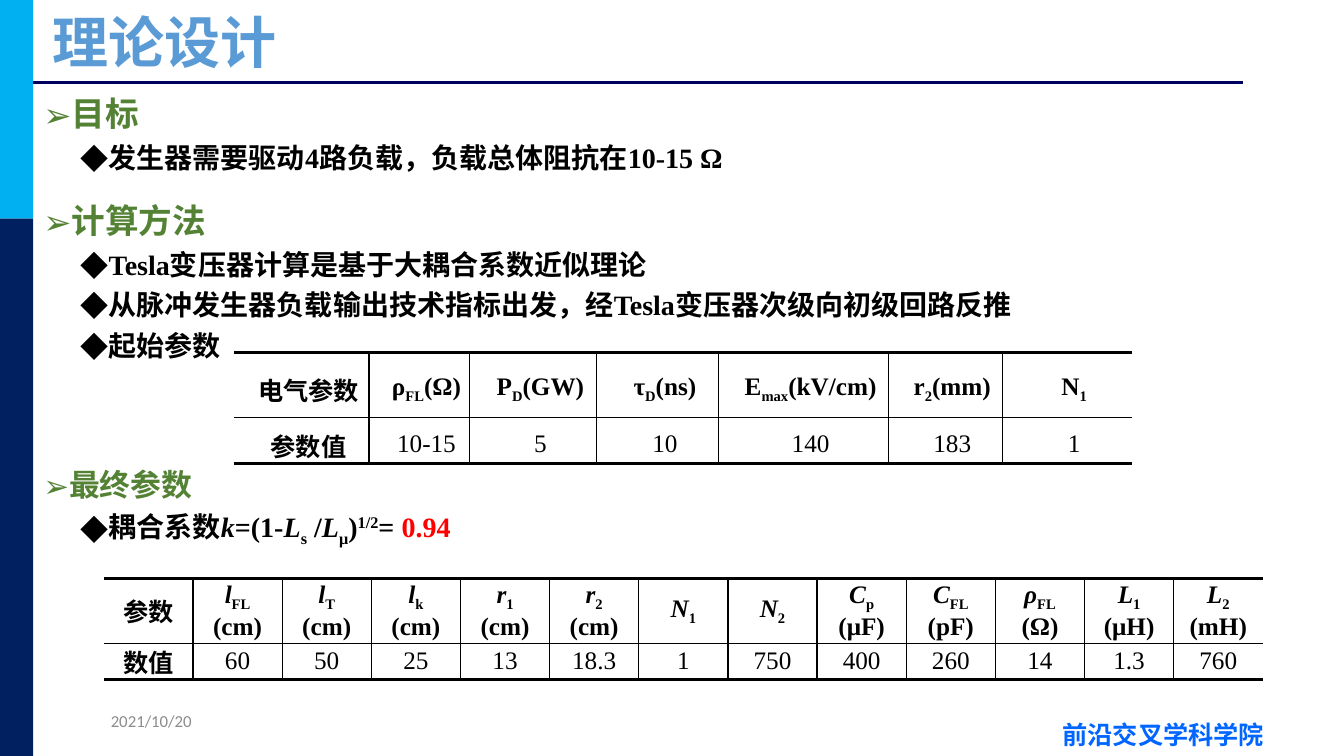
from dataclasses import dataclass
from typing import Optional

from lxml.etree import SubElement
from pptx import Presentation
from pptx.dml.color import RGBColor
from pptx.enum.shapes import MSO_CONNECTOR, MSO_SHAPE
from pptx.enum.text import MSO_ANCHOR, MSO_AUTO_SIZE, PP_ALIGN
from pptx.oxml.ns import qn
from pptx.util import Inches, Pt

SKY = RGBColor(0x00, 0xB0, 0xF0)
NAVY = RGBColor(0x00, 0x20, 0x60)
RULE = RGBColor(0x00, 0x00, 0x60)
LINK = RGBColor(0x00, 0x66, 0xFF)
BLUE = RGBColor(0x5B, 0x9B, 0xD5)
GREEN = RGBColor(0x54, 0x82, 0x35)
GRAY = RGBColor(0x8C, 0x8C, 0x8C)
RED = RGBColor(0xFF, 0x00, 0x00)
BLACK = RGBColor(0x00, 0x00, 0x00)
WHITE = RGBColor(0xFF, 0xFF, 0xFF)
SANS = "Noto Sans CJK SC"
SERIF = "Times New Roman"
SUB, SUP = -25, 30


@dataclass
class Run:
    text: str
    size: float = 18
    color: RGBColor = BLACK
    font: str = SERIF
    bold: bool = True
    slant: bool = False
    base: int = 0


@dataclass
class Item:
    runs: list[Run]
    head: bool = False
    gap: float = 5


@dataclass
class Param:
    sign: str
    sub: str
    unit: str
    value: str


@dataclass
class Grid:
    left: float
    top: float
    cols: list[float]
    rows: list[float]
    names: tuple[str, str]
    params: list[Param]
    stack: bool
    slant: bool
    indent: float = 0
    pitch: float = 1


def add_run(para, run: Run) -> None:
    part = para.add_run()
    part.text = run.text
    font = part.font
    font.size, font.bold, font.italic = Pt(run.size), run.bold, run.slant
    font.name = run.font
    font.color.rgb = run.color
    props = font._element
    if run.base:
        props.set("baseline", str(run.base * 1000))
    if run.font != "Calibri":
        SubElement(props, qn("a:ea")).set("typeface", SANS)


def add_bar(slide, top: float, height: float, color: RGBColor) -> None:
    bar = slide.shapes.add_shape(MSO_SHAPE.RECTANGLE, 0, Inches(top),
                                 Inches(0.33), Inches(height))
    bar.shadow.inherit = False
    bar.fill.solid()
    bar.fill.fore_color.rgb = color
    bar.line.fill.background()


def add_note(slide, left: float, top: float, width: float, run: Run) -> None:
    box = slide.shapes.add_textbox(Inches(left), Inches(top), Inches(width), Inches(0.4))
    box.text_frame.word_wrap = True
    box.text_frame.vertical_anchor = MSO_ANCHOR.MIDDLE
    add_run(box.text_frame.paragraphs[0], run)


def place(shape, left: float, top: float, width: float, height: float):
    shape.left, shape.top = Inches(left), Inches(top)
    shape.width, shape.height = Inches(width), Inches(height)
    shape.text_frame.auto_size = MSO_AUTO_SIZE.NONE
    shape.text_frame.word_wrap = True
    return shape.text_frame


def add_item(para, item: Item) -> None:
    props = para._p.get_or_add_pPr()
    props.set("marL", str(Inches(0.19 if item.head else 0.56)))
    props.set("indent", str(Inches(-0.19)))
    SubElement(props, qn("a:buFont")).set("typeface", SANS)
    SubElement(props, qn("a:buChar")).set("char", "➢" if item.head else "◆")
    para.level = 0 if item.head else 1
    para.line_spacing = 1.3 if item.head else 1.0
    para.space_before = Pt(item.gap)
    for run in item.runs:
        add_run(para, run)


def set_edge(cell, side: str, width: float) -> None:
    edge = SubElement(cell._tc.get_or_add_tcPr(), qn("a:" + side))
    edge.set("w", str(Pt(width)))
    if width:
        fill = SubElement(edge, qn("a:solidFill"))
        SubElement(fill, qn("a:srgbClr")).set("val", str(BLACK))
    else:
        SubElement(edge, qn("a:noFill"))


def fill_cell(cell, lines: list[list[Run]], grid: Grid) -> None:
    cell.margin_left = cell.margin_right = Inches(0.07)
    cell.margin_top = cell.margin_bottom = 0
    cell.vertical_anchor = MSO_ANCHOR.MIDDLE
    frame = cell.text_frame
    for i, line in enumerate(lines):
        para = frame.add_paragraph() if i else frame.paragraphs[0]
        para._p.get_or_add_pPr().set("indent", str(Inches(grid.indent)))
        para.alignment = PP_ALIGN.CENTER
        para.line_spacing = grid.pitch
        for run in line:
            add_run(para, run)


def add_grid(slide, grid: Grid) -> None:
    count = len(grid.cols)
    table = slide.shapes.add_table(2, count, Inches(grid.left), Inches(grid.top),
                                   Inches(sum(grid.cols)), Inches(sum(grid.rows))).table
    table.first_row = table.horz_banding = False
    for col, width in zip(table.columns, grid.cols):
        col.width = Inches(width)
    for row, height in zip(table.rows, grid.rows):
        row.height = Inches(height)
    # Heading row above, values below
    for r, name in enumerate(grid.names):
        fill_cell(table.cell(r, 0), [[Run(name, font=SANS)]], grid)
    for c, param in enumerate(grid.params, 1):
        sign = [Run(param.sign, slant=grid.slant), Run(param.sub, base=SUB)]
        unit = [Run(param.unit)] if param.unit else []
        lines = [sign, unit] if grid.stack and unit else [sign + unit]
        fill_cell(table.cell(0, c), lines, grid)
        fill_cell(table.cell(1, c), [[Run(param.value, bold=False)]], grid)
    for r in range(2):
        for c in range(count):
            cell = table.cell(r, c)
            set_edge(cell, "lnL", 1 if c else 0)
            set_edge(cell, "lnR", 1 if c < count - 1 else 0)
            set_edge(cell, "lnT", 1 if r else 2.25)
            set_edge(cell, "lnB", 2.25 if r else 1)
            cell.fill.solid()
            cell.fill.fore_color.rgb = WHITE


def head(text: str, gap: float = 10, size: float = 24) -> Item:
    return Item([Run(text, size, GREEN)], True, gap)


def point(text: str) -> Item:
    return Item([Run(text, 20)])


def math(text: str, slant: bool = False, base: int = 0,
         color: Optional[RGBColor] = None) -> Run:
    return Run(text, 20, color or BLACK, slant=slant, base=base)


ITEMS = [
    head("目标", 0), point("发生器需要驱动4路负载，负载总体阻抗在10-15 Ω"),
    head("计算方法"), point("Tesla变压器计算是基于大耦合系数近似理论"),
    point("从脉冲发生器负载输出技术指标出发，经Tesla变压器次级向初级回路反推"),
    point("起始参数"), head("最终参数", 66, 22),
    Item([math("耦合系数"), math("k", True), math("=(1-"), math("L", True),
          math("s", base=SUB), math(" /"), math("L", True), math("μ", base=SUB),
          math(")"), math("1/2", base=SUP), math("= "), math("0.94", color=RED)]),
]
START = Grid(2.32, 3.5, [1.34, 1, 1.26, 1.21, 1.68, 1.13, 1.29], [0.64, 0.46],
             ("电气参数", "参数值"), [
    Param("ρ", "FL", "(Ω)", "10-15"), Param("P", "D", "(GW)", "5"),
    Param("τ", "D", "(ns)", "10"), Param("E", "max", "(kV/cm)", "140"),
    Param("r", "2", "(mm)", "183"), Param("N", "1", "", "1"),
], False, False, 0.14, 1.25)
FINAL = Grid(1.03, 5.74, [11.5 / 13] * 13, [0.6, 0.36], ("参数", "数值"), [
    Param("l", "FL", "(cm)", "60"), Param("l", "T", "(cm)", "50"),
    Param("l", "k", "(cm)", "25"), Param("r", "1", "(cm)", "13"),
    Param("r", "2", "(cm)", "18.3"), Param("N", "1", "", "1"),
    Param("N", "2", "", "750"), Param("C", "p", "(μF)", "400"),
    Param("C", "FL", "(pF)", "260"), Param("ρ", "FL", "(Ω)", "14"),
    Param("L", "1", "(μH)", "1.3"), Param("L", "2", "(mH)", "760"),
], True, True)


def main() -> None:
    deck = Presentation()
    deck.slide_width, deck.slide_height = Inches(13.33), Inches(7.5)
    slide = deck.slides.add_slide(deck.slide_layouts[1])
    # Frame: side bars, rule, school and date
    add_bar(slide, 0, 2.17, SKY)
    add_bar(slide, 2.17, 5.33, NAVY)
    rule = slide.shapes.add_connector(MSO_CONNECTOR.STRAIGHT, Inches(0.33),
                                      Inches(0.82), Inches(12.33), Inches(0.82))
    rule.line.color.rgb, rule.line.width = RULE, Pt(2.5)
    SubElement(rule._element.spPr, qn("a:effectLst"))
    add_note(slide, 10.44, 7.09, 3, Run("前沿交叉学科学院", 18, LINK, SANS))
    add_note(slide, 1, 6.95, 1.31, Run("2021/10/20", 12, GRAY, "Calibri", False))
    # Title and list
    title = place(slide.shapes.title, 0.42, 0.08, 11.75, 0.75)
    title.vertical_anchor = MSO_ANCHOR.MIDDLE
    title.paragraphs[0].alignment = PP_ALIGN.LEFT
    title.paragraphs[0].line_spacing = 0.9
    add_run(title.paragraphs[0], Run("理论设计", 40, BLUE, SANS))
    body = place(slide.placeholders[1], 0.33, 0.75, 10.58, 5.87)
    for i, item in enumerate(ITEMS):
        add_item(body.add_paragraph() if i else body.paragraphs[0], item)
    # Tables
    add_grid(slide, START)
    add_grid(slide, FINAL)
    deck.save("out.pptx")


if __name__ == "__main__":
    main()
